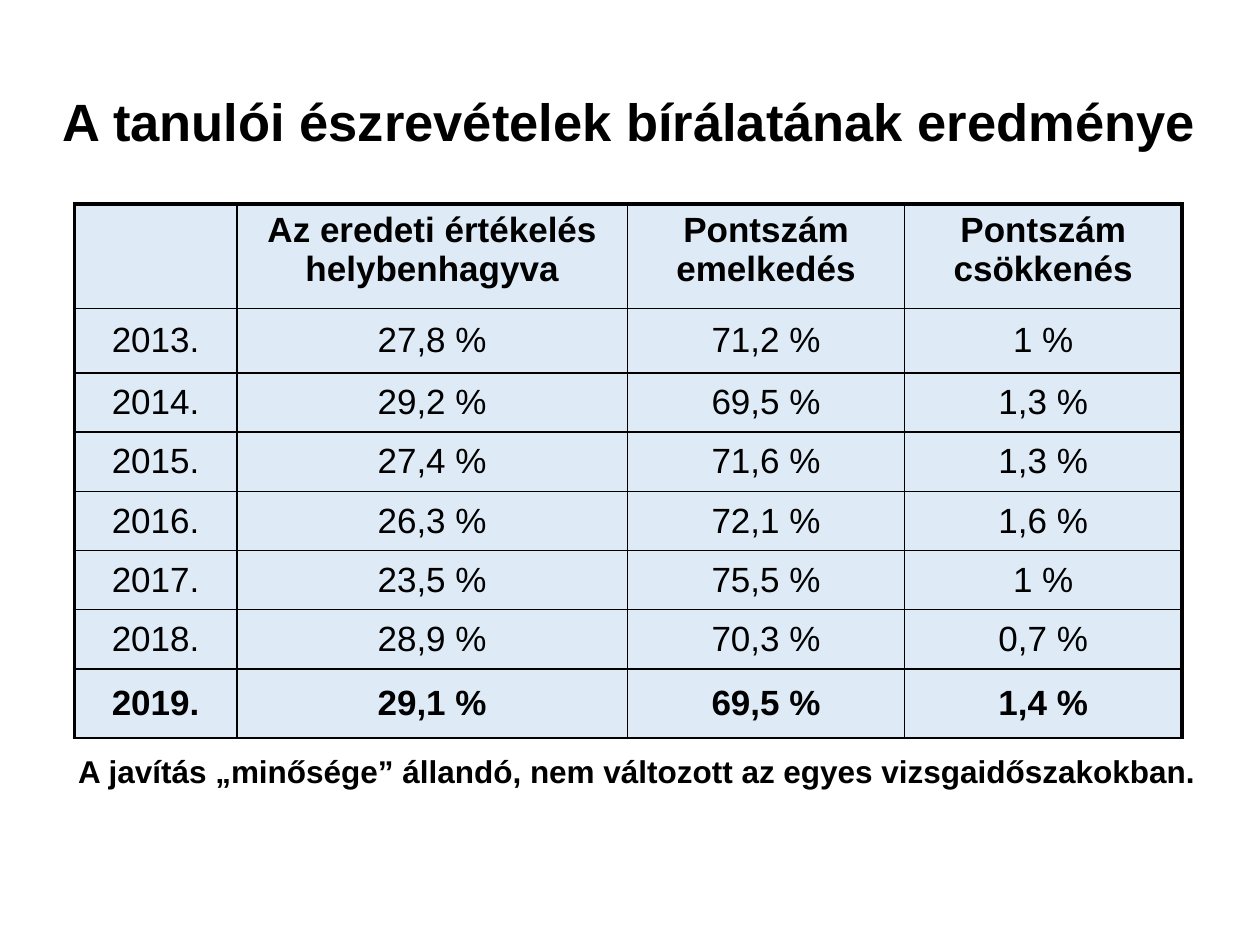
from lxml.etree import SubElement
from pptx import Presentation
from pptx.dml.color import RGBColor
from pptx.enum.text import MSO_ANCHOR as Anchor, PP_ALIGN as Align
from pptx.oxml.ns import qn
from pptx.util import Inches, Pt


def color(code):
    return RGBColor.from_string(code)


def write(frame, text, size=20, bold=False, anchor=Anchor.MIDDLE, space=1.0):
    frame.word_wrap = True
    frame.vertical_anchor = anchor
    para = frame.paragraphs[0]
    para.alignment = Align.CENTER
    para.line_spacing = space
    run = para.add_run()
    run.text = text
    run.font.name = "Arial"
    run.font.size = Pt(size)
    run.font.bold = bold
    run.font.color.rgb = color("000000")


deck = Presentation()
deck.slide_width = Inches(10)
deck.slide_height = Inches(7.5)
slide = deck.slides.add_slide(deck.slide_layouts[6])

title = slide.shapes.add_textbox(Inches(0.27), Inches(0.6), Inches(9.45), Inches(0.71))
write(title.text_frame, "A tanulói észrevételek bírálatának eredménye", size=30, bold=True)

rows = [
    ["", "Az eredeti értékelés helybenhagyva", "Pontszám emelkedés", "Pontszám csökkenés"],
    ["2013.", "27,8 %", "71,2 %", "1 %"],
    ["2014.", "29,2 %", "69,5 %", "1,3 %"],
    ["2015.", "27,4 %", "71,6 %", "1,3 %"],
    ["2016.", "26,3 %", "72,1 %", "1,6 %"],
    ["2017.", "23,5 %", "75,5 %", "1 %"],
    ["2018.", "28,9 %", "70,3 %", "0,7 %"],
    ["2019.", "29,1 %", "69,5 %", "1,4 %"],
]
widths = [1.29, 3.1, 2.2, 2.2]
heights = [0.83, 0.51] + [0.47] * 5 + [0.55]
last = len(rows) - 1

frame = slide.shapes.add_table(
    len(rows), len(widths), Inches(0.59), Inches(1.62),
    Inches(sum(widths)), Inches(sum(heights)))
table = frame.table
for col, width in zip(table.columns, widths):
    col.width = Inches(width)
for row, height in zip(table.rows, heights):
    row.height = Inches(height)

for r, row in enumerate(rows):
    for c, text in enumerate(row):
        cell = table.cell(r, c)
        anchor = Anchor.MIDDLE if r else Anchor.TOP
        write(cell.text_frame, text, bold=r in (0, last), anchor=anchor)
        cell.vertical_anchor = anchor
        props = cell._tc.get_or_add_tcPr()
        thick = {"L": c == 0, "R": c == len(widths) - 1, "T": r == 0, "B": False}
        for side, heavy in thick.items():
            line = SubElement(props, qn(f"a:ln{side}"), w=str(Pt(2.25 if heavy else 1)))
            fill = SubElement(line, qn("a:solidFill"))
            SubElement(fill, qn("a:srgbClr"), val="000000")
        cell.fill.solid()
        cell.fill.fore_color.rgb = color("DEEBF7")

note = slide.shapes.add_textbox(Inches(0.35), Inches(5.95), Inches(9.41), Inches(0.37))
write(note.text_frame,
      "A javítás „minősége” állandó, nem változott az egyes vizsgaidőszakokban.",
      size=18, bold=True, anchor=Anchor.TOP, space=0.9)

deck.save("out.pptx")
